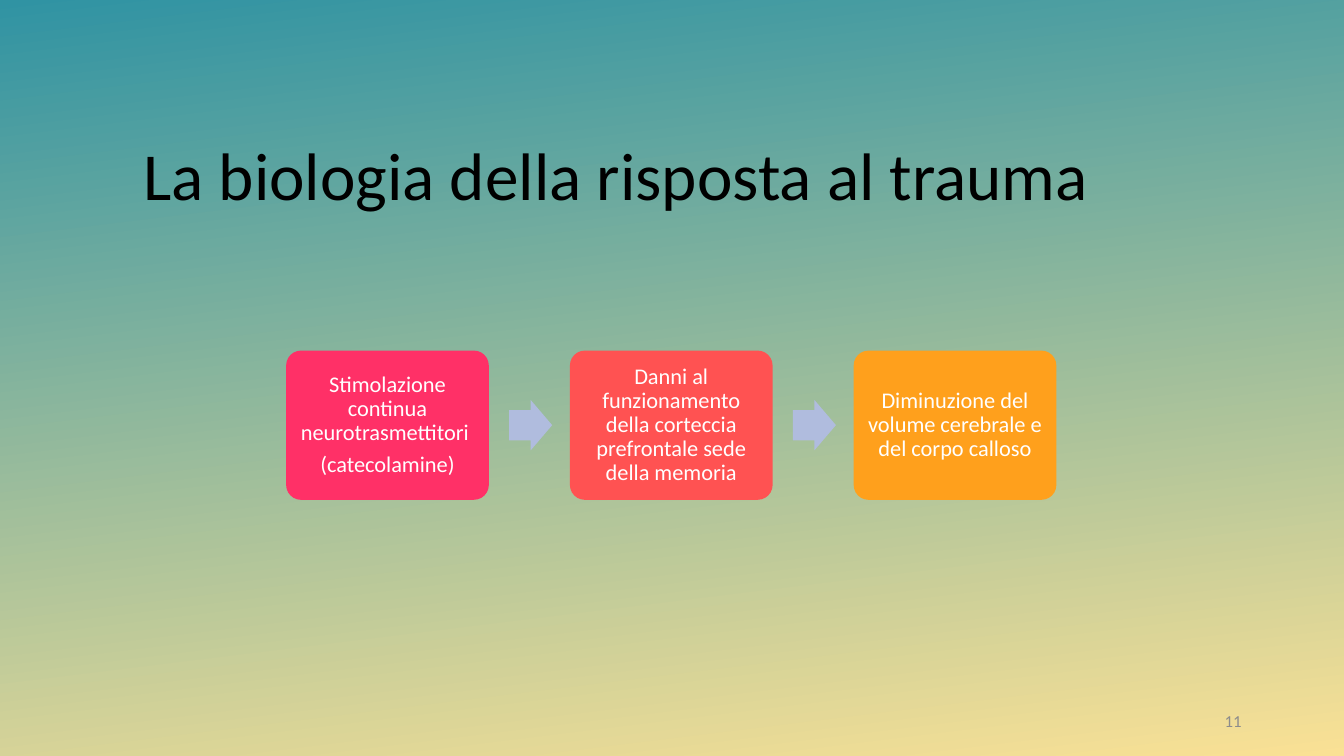
from dataclasses import dataclass

from pptx import Presentation
from pptx.dml.color import RGBColor
from pptx.enum.shapes import MSO_SHAPE
from pptx.enum.text import MSO_ANCHOR, PP_ALIGN
from pptx.util import Pt


@dataclass(frozen=True)
class Theme:
    font: str = "Calibri"
    title_size: int = 48
    card_size: int = 16
    number_size: int = 12
    ink: str = "000000"
    light: str = "FFFFFF"
    muted: str = "8C8C8C"
    arrow: str = "B0BCDE"
    cards: tuple = ("FF3067", "FF5252", "FFA01C")
    background: tuple = ("FAE195", "3093A3")
    background_angle: int = 97


class SlideBuilder:
    """Draws styled elements on the current slide, with lengths in points."""

    def __init__(self, page, theme):
        self.page = page
        self.theme = theme

    def background(self):
        fill = self.page.background.fill
        fill.gradient()
        fill.gradient_angle = self.theme.background_angle
        for stop, color in zip(fill.gradient_stops, self.theme.background):
            stop.color.rgb = RGBColor.from_string(color)

    def fill_text(self, frame, lines, size, color, align, spacing=1.0, gap=0):
        frame.word_wrap = True
        frame.vertical_anchor = MSO_ANCHOR.MIDDLE
        for index, line in enumerate(lines):
            paragraph = frame.add_paragraph() if index else frame.paragraphs[0]
            paragraph.text = line
            paragraph.alignment = align
            paragraph.line_spacing = spacing
            paragraph.space_after = Pt(gap if index < len(lines) - 1 else 0)
            paragraph.font.name = self.theme.font
            paragraph.font.size = Pt(size)
            paragraph.font.color.rgb = RGBColor.from_string(color)

    def text(self, left, top, width, height, line, size, color, align, spacing=1.0):
        box = self.page.shapes.add_textbox(Pt(left), Pt(top), Pt(width), Pt(height))
        self.fill_text(box.text_frame, [line], size, color, align, spacing)

    def shape(self, kind, left, top, width, height, color, adjustments):
        shape = self.page.shapes.add_shape(kind, Pt(left), Pt(top), Pt(width), Pt(height))
        shape.shadow.inherit = False
        shape.fill.solid()
        shape.fill.fore_color.rgb = RGBColor.from_string(color)
        shape.line.fill.background()
        for index, value in enumerate(adjustments):
            shape.adjustments[index] = value
        return shape

    def card(self, left, top, width, height, lines, color):
        card = self.shape(MSO_SHAPE.ROUNDED_RECTANGLE, left, top, width, height, color, [0.1])
        frame = card.text_frame
        frame.margin_left = frame.margin_right = Pt(5)
        frame.margin_top = frame.margin_bottom = Pt(5)
        self.fill_text(frame, lines, self.theme.card_size, self.theme.light,
                       PP_ALIGN.CENTER, 0.9, 5.6)

    def arrow(self, left, top, width, height):
        self.shape(MSO_SHAPE.RIGHT_ARROW, left, top, width, height,
                   self.theme.arrow, [0.6, 0.5])


STEPS = [
    ["Stimolazione continua neurotrasmettitori ", "(catecolamine)"],
    ["Danni al funzionamento della corteccia prefrontale sede della memoria"],
    ["Diminuzione del volume cerebrale e del corpo calloso"],
]
FIRST_LEFT, CARD_TOP, CARD_WIDTH, CARD_HEIGHT = 204.4, 250.4, 144.8, 106.6
CARD_PITCH = 202.7
ARROW_WIDTH, ARROW_HEIGHT, ARROW_GAP = 30.7, 36, 14.5


def main():
    deck = Presentation()
    deck.slide_width, deck.slide_height = Pt(960), Pt(540)
    theme = Theme()
    builder = SlideBuilder(deck.slides.add_slide(deck.slide_layouts[6]), theme)

    builder.background()
    builder.text(87.1, 57.6, 716.4, 140.4, "La biologia della risposta al trauma ",
                 theme.title_size, theme.ink, PP_ALIGN.CENTER, 0.9)
    builder.text(678, 500.5, 216, 28.8, "11",
                 theme.number_size, theme.muted, PP_ALIGN.RIGHT)

    arrow_top = CARD_TOP + (CARD_HEIGHT - ARROW_HEIGHT) / 2
    for index, (lines, color) in enumerate(zip(STEPS, theme.cards)):
        left = FIRST_LEFT + index * CARD_PITCH
        builder.card(left, CARD_TOP, CARD_WIDTH, CARD_HEIGHT, lines, color)
        if index < len(STEPS) - 1:
            builder.arrow(left + CARD_WIDTH + ARROW_GAP, arrow_top, ARROW_WIDTH, ARROW_HEIGHT)

    deck.save("out.pptx")


if __name__ == "__main__":
    main()
